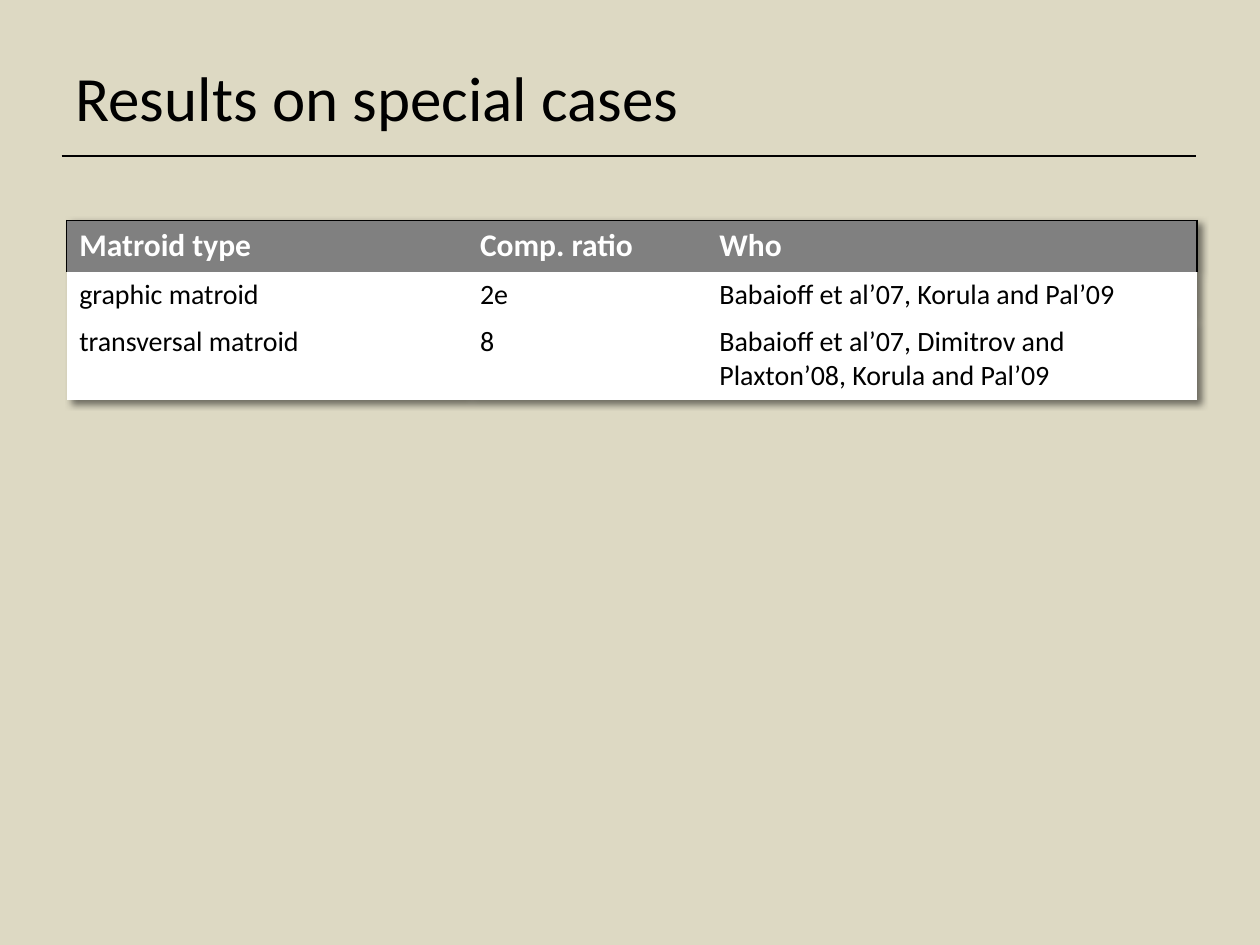
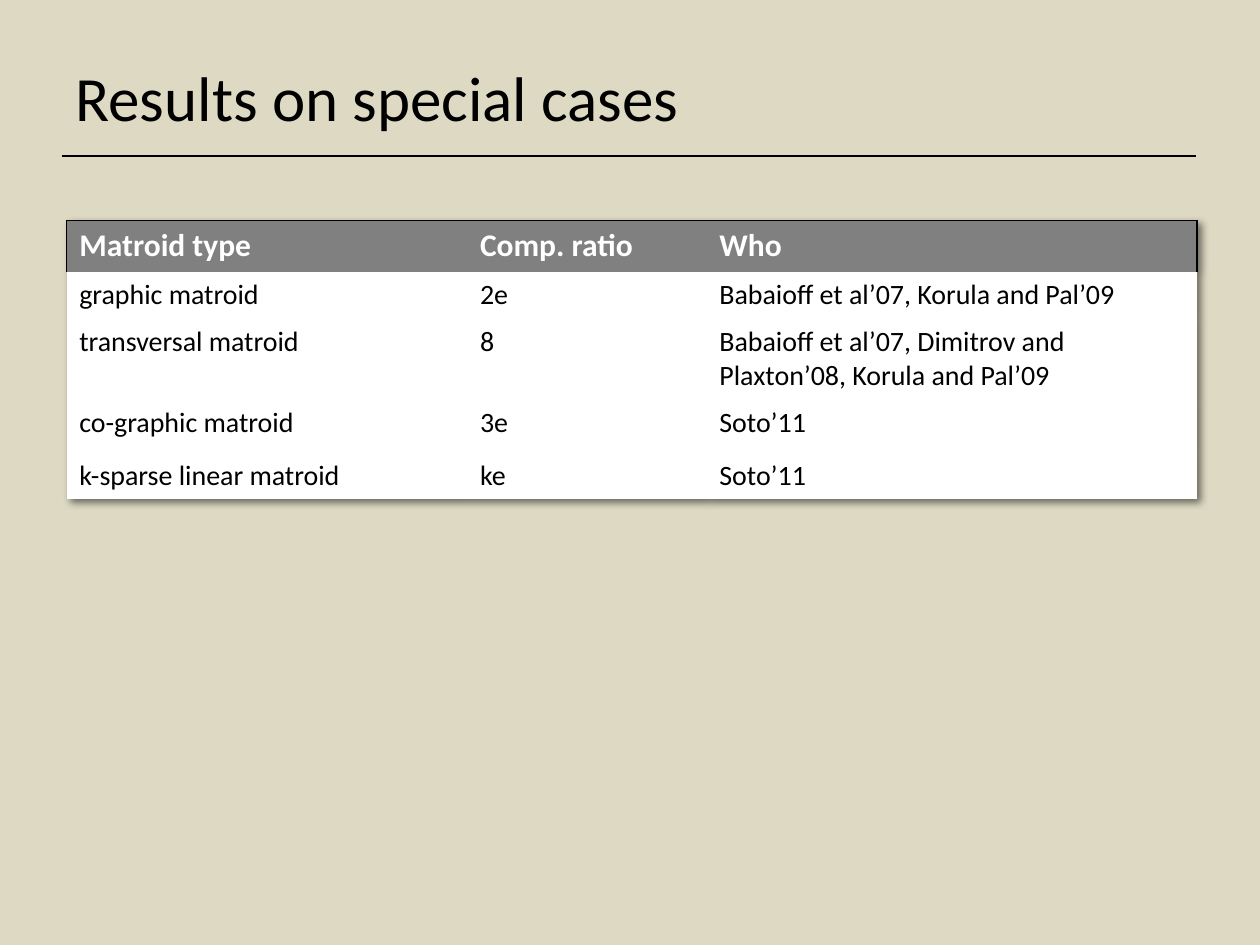
"""Build two slides listing results for special cases of matroids."""
from lxml.etree import SubElement
from pptx import Presentation
from pptx.dml.color import RGBColor
from pptx.enum.shapes import MSO_CONNECTOR
from pptx.enum.text import MSO_ANCHOR, PP_ALIGN
from pptx.oxml import parse_xml
from pptx.oxml.ns import nsdecls, qn
from pptx.util import Inches, Pt

TITLE = "Results on special cases"
HEADER = ("Matroid type", "Comp. ratio", "Who")
FIRST_RESULTS = [
    ("graphic matroid", "2e", "Babaioff et al’07, Korula and Pal’09"),
    ("transversal matroid", "8",
     "Babaioff et al’07, Dimitrov and Plaxton’08, Korula and Pal’09"),
]
LATER_RESULTS = [
    ("co-graphic matroid", "3e", "Soto’11"),
    ("k-sparse linear matroid", "ke", "Soto’11"),
]
SLIDES = [FIRST_RESULTS, FIRST_RESULTS + LATER_RESULTS]

FONT = "Calibri"
COLOURS = {"background": "DDD9C3", "ink": "000000", "header": "808080", "paper": "FFFFFF"}
TITLE_BOX = (0.5, 0.3, 9, 0.93)
RULE = (0.49, 1.24, 9.49, 1.24)
TABLE_LEFT, TABLE_TOP = 0.53, 1.75
COLUMN_WIDTHS = (3.18, 1.9, 3.89)
ROW_HEIGHTS = (0.4, 0.37, 0.64, 0.42, 0.37)
PLAIN_TABLE_STYLE = "{2D5ABB26-0587-4C30-8999-92F81FD0307C}"


def colour(name):
    return RGBColor.from_string(COLOURS[name])


def inches(lengths):
    return [Inches(length) for length in lengths]


def format_text(text_frame, size, ink, bold=False):
    for paragraph in text_frame.paragraphs:
        paragraph.alignment = PP_ALIGN.LEFT
        for run in paragraph.runs:
            run.font.name = FONT
            run.font.size = Pt(size)
            run.font.bold = bold
            run.font.color.rgb = colour(ink)


def add_title(slide):
    title = slide.shapes.title
    title.left, title.top, title.width, title.height = inches(TITLE_BOX)
    title.text_frame.text = TITLE
    title.text_frame.vertical_anchor = MSO_ANCHOR.MIDDLE
    format_text(title.text_frame, 36, "ink")


def add_rule(slide):
    rule = slide.shapes.add_connector(MSO_CONNECTOR.STRAIGHT, *inches(RULE))
    rule.line.color.rgb = colour("ink")
    rule.line.width = Pt(1)
    SubElement(rule._element.spPr, qn("a:effectLst"))


def add_borders(cell, sides):
    properties = cell._tc.get_or_add_tcPr()
    for position, side in enumerate(sides):
        properties.insert(position, parse_xml(
            f'<a:ln{side} {nsdecls("a")} w="{Pt(0.75)}"><a:solidFill>'
            f'<a:srgbClr val="{COLOURS["ink"]}"/></a:solidFill></a:ln{side}>'))


def add_shadow(table):
    properties = table._tbl.tblPr
    properties.find(qn("a:tableStyleId")).text = PLAIN_TABLE_STYLE
    properties.insert(0, parse_xml(
        f'<a:effectLst {nsdecls("a")}><a:outerShdw blurRad="{Pt(4)}" dist="{Pt(3)}" '
        f'dir="2700000" algn="tl" rotWithShape="0"><a:srgbClr val="{COLOURS["ink"]}">'
        '<a:alpha val="50000"/></a:srgbClr></a:outerShdw></a:effectLst>'))


def add_results(slide, results):
    rows = [HEADER, *results]
    heights = ROW_HEIGHTS[:len(rows)]
    frame = slide.shapes.add_table(
        len(rows), len(HEADER),
        *inches((TABLE_LEFT, TABLE_TOP, sum(COLUMN_WIDTHS), sum(heights))))
    table = frame.table
    table.horz_banding = False
    add_shadow(table)
    for column, width in zip(table.columns, inches(COLUMN_WIDTHS)):
        column.width = width
    for row, height in zip(table.rows, inches(heights)):
        row.height = height
    for row_index, texts in enumerate(rows):
        is_header = row_index == 0
        for column_index, text in enumerate(texts):
            cell = table.cell(row_index, column_index)
            cell.text_frame.text = text
            cell.fill.solid()
            cell.fill.fore_color.rgb = colour("header" if is_header else "paper")
            if is_header:
                format_text(cell.text_frame, 18, "paper", bold=True)
                add_borders(cell, ("LT", "T", "RT")[column_index])
            else:
                format_text(cell.text_frame, 16, "ink")


def main():
    presentation = Presentation()
    presentation.slide_width, presentation.slide_height = inches((10, 7.5))
    background = presentation.slide_master.background.fill
    background.solid()
    background.fore_color.rgb = colour("background")
    for results in SLIDES:
        slide = presentation.slides.add_slide(presentation.slide_layouts[5])
        add_rule(slide)
        add_title(slide)
        add_results(slide, results)
    presentation.save("out.pptx")


if __name__ == "__main__":
    main()
